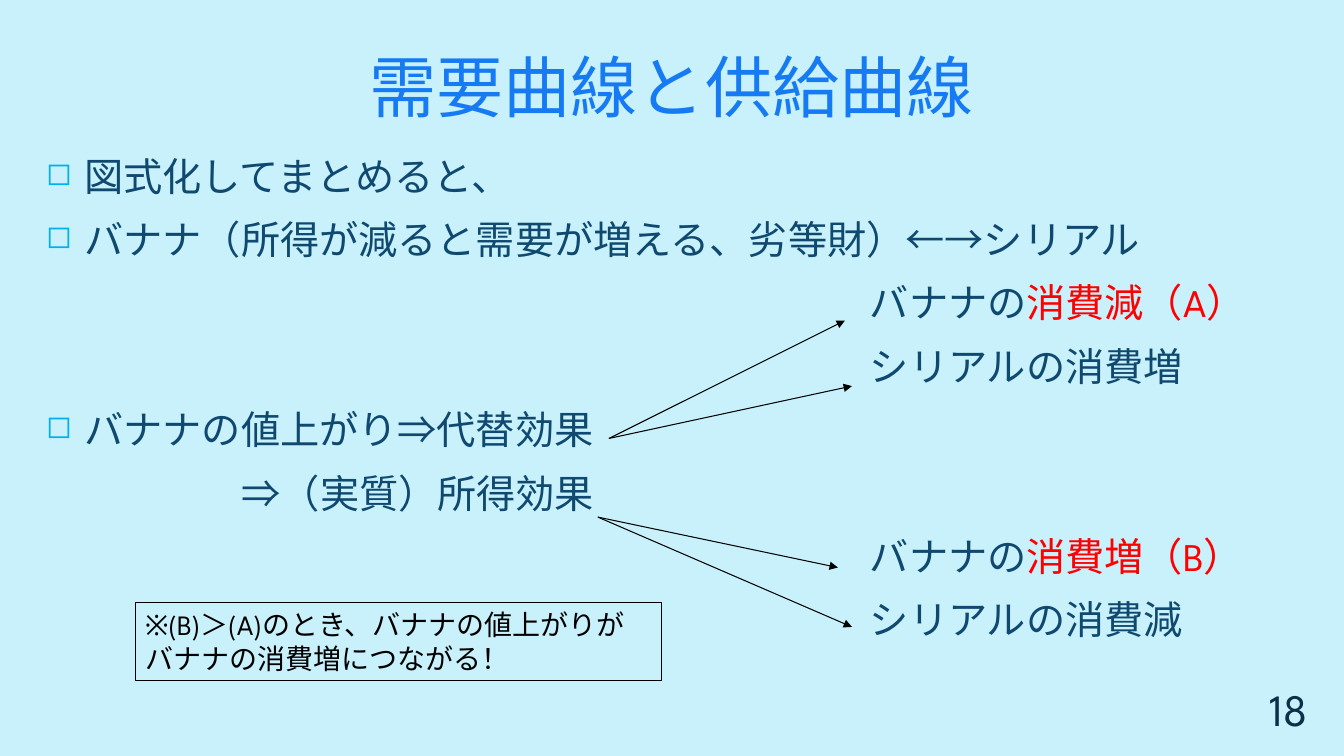
from lxml.etree import SubElement as Sub
from pptx import Presentation
from pptx.dml.color import RGBColor as RGB
from pptx.enum.shapes import MSO_CONNECTOR as Conn, MSO_SHAPE as Shape
from pptx.enum.text import MSO_ANCHOR as Anchor, MSO_AUTO_SIZE as Auto, PP_ALIGN as Align
from pptx.oxml.ns import qn
from pptx.util import Inches, Pt

FONT = "League Spartan"
HEX = {"back": "C8F1FB", "title": "167BF3", "body": "0F496F", "mark": "00B0F0",
       "red": "FF0000", "page": "0A304A", "black": "000000"}
HANG, MID, FAR = 0.38, 1.94, 8.17
BODY = [
    (HANG, True, "図式化してまとめると、", ""),
    (HANG, True, "バナナ（所得が減ると需要が増える、劣等財）←→シリアル", ""),
    (FAR, False, "バナナの", "消費減（A）"),
    (FAR, False, "シリアルの消費増", ""),
    (HANG, True, "バナナの値上がり⇒代替効果", ""),
    (MID, False, "⇒（実質）所得効果", ""),
    (FAR, False, "バナナの", "消費増（B）"),
    (FAR, False, "シリアルの消費減", ""),
]
ARROWS = {
    (6.04, 4.35): [(8.38, 3.18), (8.45, 3.83)],
    (5.93, 5.13): [(8.31, 5.63), (8.45, 6.22)],
}


def tint(key):
    """Return the named colour."""
    return RGB.from_string(HEX[key])


def style(para, size, key, align=Align.LEFT):
    """Set the font and alignment of a paragraph."""
    para.alignment = align
    font = para.font
    font.name, font.size = FONT, Pt(size)
    font.color.rgb = tint(key)


def set_title(slide, text):
    """Place and format the title."""
    title = slide.shapes.title
    title.left, title.top = Inches(0.36), Inches(0.36)
    title.width, title.height = Inches(12.6), Inches(0.94)
    frame = title.text_frame
    frame.text = text
    frame.auto_size = Auto.NONE
    frame.vertical_anchor = Anchor.BOTTOM
    style(frame.paragraphs[0], 48, "title", Align.CENTER)


def add_frame(slide, box, anchor=Anchor.TOP):
    """Add a wrapping text box and return its frame."""
    frame = slide.shapes.add_textbox(*map(Inches, box)).text_frame
    frame.word_wrap = True
    frame.vertical_anchor = anchor
    return frame


def indent(para, left, mark):
    """Indent a paragraph, with a hanging square if marked."""
    props = para._p.get_or_add_pPr()
    props.set("marL", str(Inches(left)))
    props.set("indent", str(-Inches(HANG) if mark else 0))
    if mark:
        Sub(Sub(props, qn("a:buClr")), qn("a:srgbClr"), val=HEX["mark"])
        Sub(props, qn("a:buSzPct"), val="80000")
        Sub(props, qn("a:buChar"), char="◻")
    else:
        Sub(props, qn("a:buNone"))


def add_body(slide):
    """Add the outline with its red endings."""
    frame = add_frame(slide, (0.36, 1.46, 12.6, 5.61))
    for i, (left, mark, text, end) in enumerate(BODY):
        para = frame.add_paragraph() if i else frame.paragraphs[0]
        para.space_before, para.space_after = Pt(5.6), Pt(6)
        indent(para, left, mark)
        style(para, 28, "body")
        para.add_run().text = text
        if end:
            run = para.add_run()
            run.text = end
            run.font.color.rgb = tint("red")


def add_page(slide, text):
    """Add the page number."""
    frame = add_frame(slide, (12.32, 6.74, 0.75, 0.61), Anchor.BOTTOM)
    frame.text = text
    style(frame.paragraphs[0], 32, "page", Align.RIGHT)


def add_arrow(slide, start, end):
    """Draw a thin arrow between two points."""
    line = slide.shapes.add_connector(Conn.STRAIGHT, *map(Inches, start + end))
    line.line.color.rgb = tint("black")
    line.line.width = Pt(0.75)
    Sub(line.line._get_or_add_ln(), qn("a:tailEnd"), type="triangle")
    Sub(line._element.spPr, qn("a:effectLst"))


def add_note(slide, text):
    """Add the framed remark."""
    box = slide.shapes.add_shape(Shape.RECTANGLE, *map(Inches, (1.34, 5.98, 5.22, 0.77)))
    box.shadow.inherit = False
    box.fill.background()
    box.line.color.rgb = tint("black")
    box.line.width = Pt(0.75)
    frame = box.text_frame
    frame.word_wrap = True
    frame.vertical_anchor = Anchor.TOP
    frame.text = text
    style(frame.paragraphs[0], 20, "black")


def main():
    """Build and save the slide."""
    deck = Presentation()
    deck.slide_width, deck.slide_height = Inches(13.33), Inches(7.5)
    slide = deck.slides.add_slide(deck.slide_layouts[5])
    fill = slide.background.fill
    fill.solid()
    fill.fore_color.rgb = tint("back")
    set_title(slide, "需要曲線と供給曲線")
    add_body(slide)
    add_page(slide, "18")
    for start, ends in ARROWS.items():
        for end in ends:
            add_arrow(slide, start, end)
    add_note(slide, "※(B)＞(A)のとき、バナナの値上がりがバナナの消費増につながる！")
    deck.save("out.pptx")


if __name__ == "__main__":
    main()
